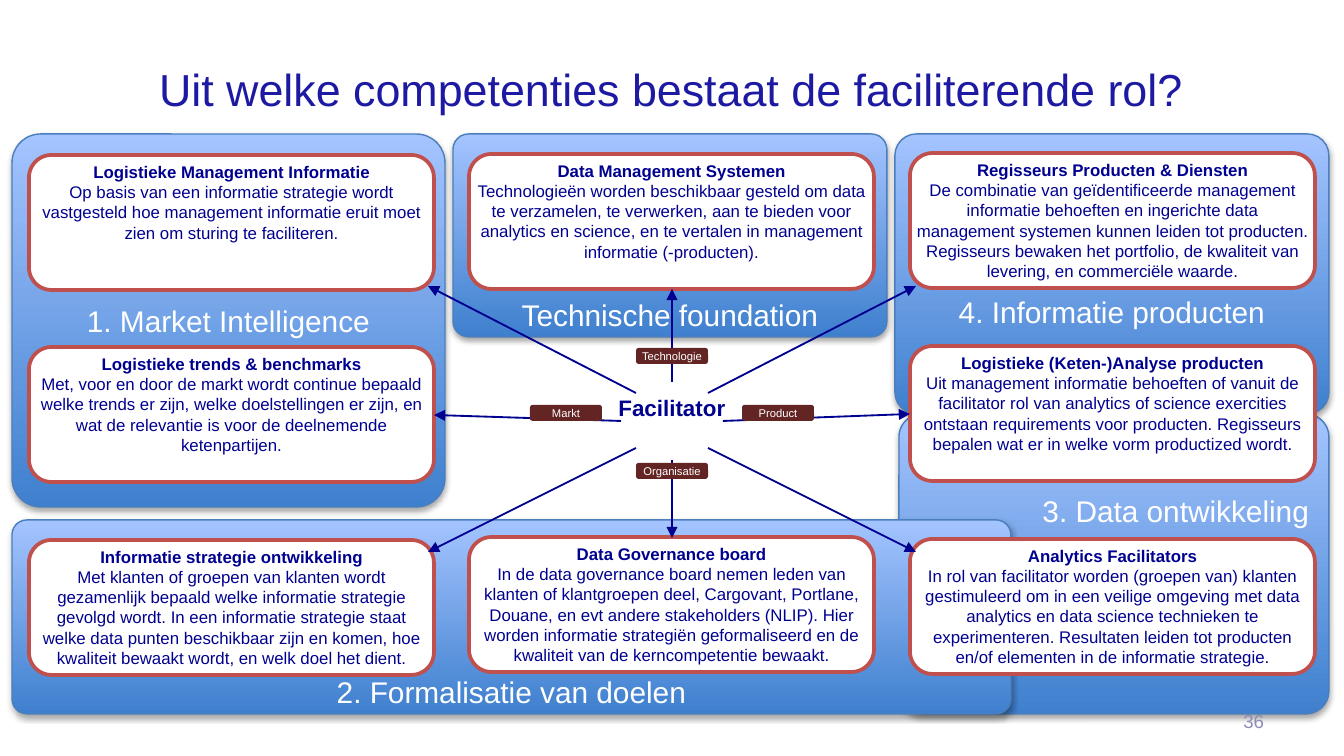
import lxml.etree
import pptx
import pptx.dml.color
import pptx.enum.shapes
import pptx.enum.text
import pptx.oxml.ns
import pptx.util

SCALE = 914400 / 134.4
COLORS = {
    "title": "1D19A2", "navy": "000090", "white": "FFFFFF", "red": "C0504D",
    "maroon": "632523", "number": "8C8CB4", "edge": "4B7EBC",
    "deep": "3F80CE", "light": "A4C4FF", "black": "000000",
}
SHAPE = pptx.enum.shapes.MSO_SHAPE
ALIGN = pptx.enum.text.PP_ALIGN
ANCHOR = pptx.enum.text.MSO_ANCHOR
qn = pptx.oxml.ns.qn

PANELS = [
    ((453, 134, 434, 203), "Technische foundation",
     {"anchor": ANCHOR.BOTTOM, "insets": (0, 0, 0, 0)}, ALIGN.CENTER),
    ((899, 414, 430, 300), "3. Data ontwikkeling", {"insets": (13, 0, 13, 106)}, ALIGN.RIGHT),
    ((895, 134, 434, 280), "4. Informatie producten", {"insets": (13, 76, 13, 0)}, ALIGN.CENTER),
    ((12, 520, 999, 194), "2. Formalisatie van doelen",
     {"anchor": ANCHOR.BOTTOM, "insets": (0, 0, 0, 0)}, ALIGN.CENTER),
    ((12, 134, 433, 373), "1. Market Intelligence", {}, ALIGN.CENTER),
]
LEFT, MIDDLE, RIGHT = 29, 469, 910
CARDS = [
    (MIDDLE, 154, "Data Management Systemen",
     "Technologieën worden beschikbaar gesteld om data te verzamelen, te verwerken, aan te bieden "
     "voor analytics en science, en te vertalen in management informatie (-producten)."),
    (RIGHT, 153, "Regisseurs Producten & Diensten",
     "De combinatie van geïdentificeerde management informatie behoeften en ingerichte data "
     "management systemen kunnen leiden tot producten. Regisseurs bewaken het portfolio, de "
     "kwaliteit van levering, en commerciële waarde."),
    (RIGHT, 346, "Logistieke (Keten-)Analyse producten",
     "Uit management informatie behoeften of vanuit de facilitator rol van analytics of science "
     "exercities ontstaan requirements voor producten. Regisseurs bepalen wat er in welke vorm "
     "productized wordt."),
    (LEFT, 347, "Logistieke trends & benchmarks",
     "Met, voor en door de markt wordt continue bepaald welke trends er zijn, welke doelstellingen "
     "er zijn, en wat de relevantie is voor de deelnemende ketenpartijen."),
    (MIDDLE, 537, "Data Governance board",
     "In de data governance board nemen leden van klanten of klantgroepen deel, Cargovant, "
     "Portlane, Douane, en evt andere stakeholders (NLIP). Hier worden informatie strategiën "
     "geformaliseerd en de kwaliteit van de kerncompetentie bewaakt."),
    (RIGHT, 539, "Analytics Facilitators",
     "In rol van facilitator worden (groepen van) klanten gestimuleerd om in een veilige omgeving "
     "met data analytics en data science technieken te experimenteren. Resultaten leiden tot "
     "producten en/of elementen in de informatie strategie."),
    (LEFT, 155, "Logistieke Management Informatie",
     "Op basis van een informatie strategie wordt vastgesteld hoe management informatie eruit moet "
     "zien om sturing te faciliteren."),
    (LEFT, 540, "Informatie strategie ontwikkeling",
     "Met klanten of groepen van klanten wordt gezamenlijk bepaald welke informatie strategie "
     "gevolgd wordt. In een informatie strategie staat welke data punten beschikbaar zijn en "
     "komen, hoe kwaliteit bewaakt wordt, en welk doel het dient."),
]
ARROWS = [
    ((672, 382), (672, 289)), ((708, 393), (916, 286)), ((636, 393), (428, 286)),
    ((621, 421), (434, 415)), ((636, 448), (428, 552)), ((672, 460), (672, 538)),
    ((708, 448), (916, 552)), ((723, 421), (910, 414)),
]
TAGS = [(636, 348, "Technologie"), (742, 405, "Product"),
        (636, 463, "Organisatie"), (530, 405, "Markt")]


def px(length):
    return pptx.util.Emu(round(length * SCALE))


def rgb(name):
    return pptx.dml.color.RGBColor.from_string(COLORS[name])


def write(frame, text, size=9, color="navy", bold=False, align=ALIGN.CENTER):
    paragraph = frame.add_paragraph() if frame.text else frame.paragraphs[0]
    paragraph.alignment = align
    run = paragraph.add_run()
    run.text = text
    run.font.name = "Arial"
    run.font.size = pptx.util.Pt(size)
    run.font.bold = bold
    run.font.color.rgb = rgb(color)


class Board:
    """Holds the style and the slide on which the competence map is drawn."""

    def __init__(self, deck):
        self.slide = deck.slides.add_slide(deck.slide_layouts[5])

    def frame(self, shape, anchor=ANCHOR.MIDDLE, insets=(13, 7, 13, 7), wrap=True):
        frame = shape.text_frame
        frame.word_wrap = wrap
        frame.auto_size = pptx.enum.text.MSO_AUTO_SIZE.NONE
        frame.vertical_anchor = anchor
        frame.margin_left, frame.margin_top, frame.margin_right, frame.margin_bottom = map(px, insets)
        return frame

    def block(self, at, kind=SHAPE.ROUNDED_RECTANGLE, fill=None, line=None, width=1):
        block = self.slide.shapes.add_shape(kind, *map(px, at))
        block.shadow.inherit = False
        if fill:
            block.fill.solid()
            block.fill.fore_color.rgb = rgb(fill)
        else:
            block.fill.background()
        if line:
            block.line.color.rgb = rgb(line)
            block.line.width = pptx.util.Pt(width)
        else:
            block.line.fill.background()
        return block

    def title(self, text):
        heading = self.slide.shapes.title
        heading.left, heading.top, heading.width, heading.height = map(px, (146, 31, 1130, 91))
        write(self.frame(heading, ANCHOR.BOTTOM), text, size=24, color="title", align=ALIGN.LEFT)

    def panel(self, at, text, layout, align):
        panel = self.block(at, line="edge", width=0.75)
        panel.adjustments[0] = 0.077
        panel.fill.gradient()
        panel.fill.gradient_angle = 90
        for stop, color in zip(panel.fill.gradient_stops, ("deep", "light")):
            stop.color.rgb = rgb(color)
        effects = panel.element.spPr.find(qn("a:effectLst"))
        shadow = lxml.etree.SubElement(effects, qn("a:outerShdw"), blurRad="40000",
                                       dist="23000", dir="5400000", rotWithShape="0")
        shade = lxml.etree.SubElement(shadow, qn("a:srgbClr"), val=COLORS["black"])
        lxml.etree.SubElement(shade, qn("a:alpha"), val="35000")
        write(self.frame(panel, **layout), text, size=16, color="white", align=align)

    def card(self, left, top, heading, body):
        card = self.block((left, top, 405, 135), fill="white", line="red", width=2)
        frame = self.frame(card, ANCHOR.TOP, (0, 0, 0, 0))
        write(frame, heading, bold=True)
        write(frame, body)

    def hub(self, text):
        hub = self.block((621, 382, 102, 78), SHAPE.OVAL)
        write(self.frame(hub, insets=(0, 0, 0, 26), wrap=False), text, size=12, bold=True)

    def arrow(self, start, end):
        arrow = self.slide.shapes.add_connector(
            pptx.enum.shapes.MSO_CONNECTOR.STRAIGHT, *map(px, start + end))
        arrow.line.color.rgb = rgb("navy")
        arrow.line.width = pptx.util.Pt(1)
        lxml.etree.SubElement(arrow.get_or_add_ln(), qn("a:tailEnd"), type="triangle")
        lxml.etree.SubElement(arrow.element.spPr, qn("a:effectLst"))

    def tag(self, left, top, text):
        tag = self.block((left, top, 72, 16), fill="maroon")
        write(self.frame(tag, insets=(0, 0, 0, 0)), text, size=6, color="white")

    def number(self, text):
        number = self.slide.shapes.add_textbox(*map(px, (964, 701, 313, 40)))
        write(self.frame(number), text, size=10, color="number", align=ALIGN.RIGHT)


def main():
    deck = pptx.Presentation()
    deck.slide_width, deck.slide_height = px(1344), px(756)
    board = Board(deck)
    for panel in PANELS:
        board.panel(*panel)
    board.title("Uit welke competenties bestaat de faciliterende rol?")
    board.number("36")
    for card in CARDS:
        board.card(*card)
    board.hub("Facilitator")
    for arrow in ARROWS:
        board.arrow(*arrow)
    for tag in TAGS:
        board.tag(*tag)
    deck.save("out.pptx")


if __name__ == "__main__":
    main()
